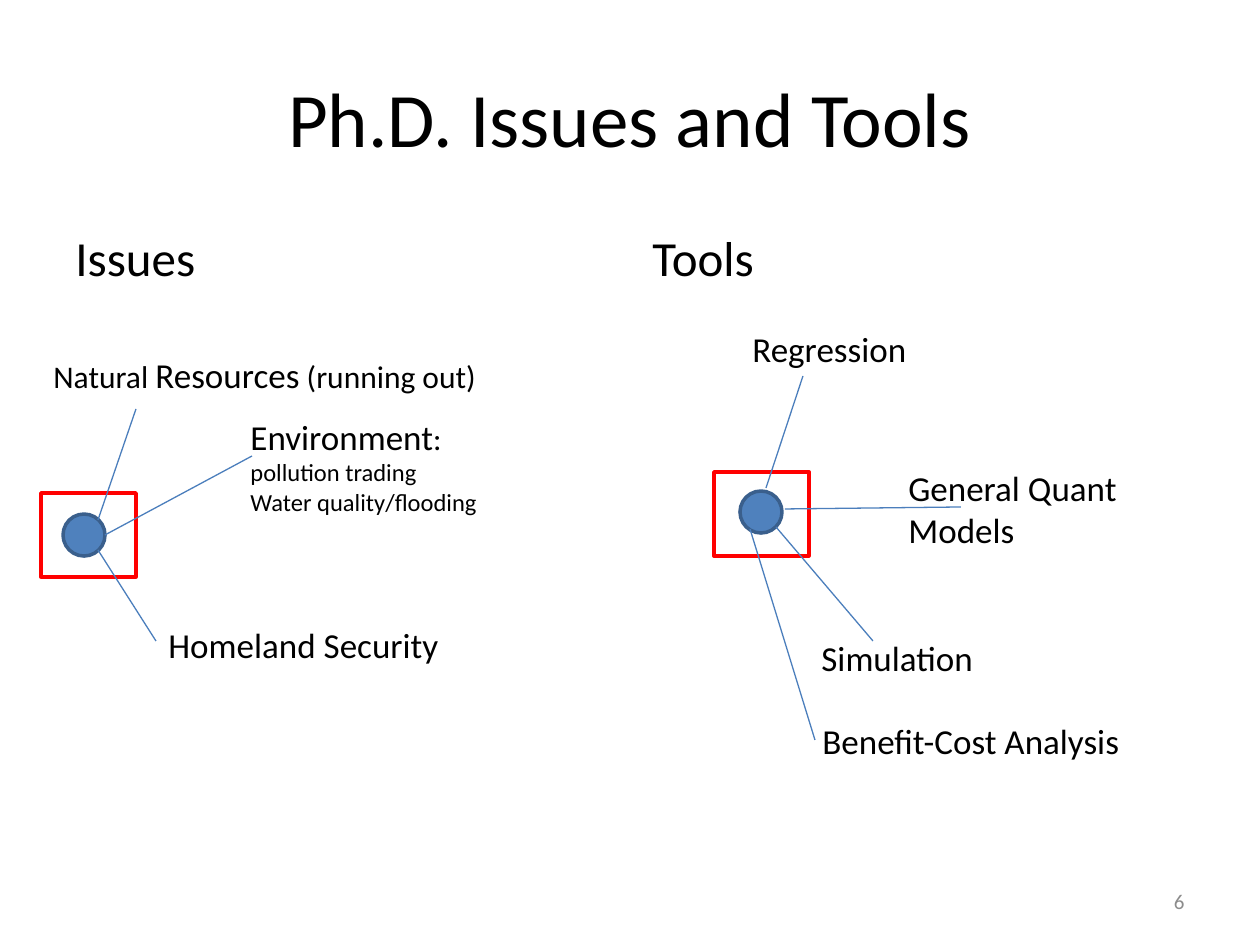
"""Build the slide that links Ph.D. issues to research tools."""
from dataclasses import dataclass

from lxml import etree
from pptx import Presentation
from pptx.dml.color import RGBColor
from pptx.enum.shapes import MSO_CONNECTOR, MSO_SHAPE
from pptx.enum.text import MSO_ANCHOR, MSO_AUTO_SIZE, PP_ALIGN
from pptx.oxml.ns import qn
from pptx.util import Emu, Pt

LEFT, MID, RIGHT = PP_ALIGN.LEFT, PP_ALIGN.CENTER, PP_ALIGN.RIGHT
TOP, HALF = MSO_ANCHOR.TOP, MSO_ANCHOR.MIDDLE
GROW, FIXED = MSO_AUTO_SIZE.SHAPE_TO_FIT_TEXT, MSO_AUTO_SIZE.NONE
RECT, OVAL, LINE = MSO_SHAPE.RECTANGLE, MSO_SHAPE.OVAL, MSO_CONNECTOR.STRAIGHT
FONT = "Calibri"
INKS = {"text": "000000", "page": "8C8C8C", "dot": "4F81BD",
        "rim": "3A5F8C", "frame": "FF0000", "ray": "4B7EBC"}
DOT, WIDE, HIGH = 42, 95, 84


@dataclass
class Run:
    text: str
    size: int = 20


@dataclass
class Label:
    box: tuple[int, int, int, int]
    paras: list[list[Run]]
    align: PP_ALIGN = LEFT
    anchor: MSO_ANCHOR = TOP
    fit: MSO_AUTO_SIZE = GROW
    ink: str = "text"


@dataclass
class Hub:
    dot: tuple[int, int]
    frame: tuple[int, int]
    rays: list[tuple[int, int, int, int]]
    labels: list[Label]


HEADS = [
    Label((63, 38, 1134, 157), [[Run("Ph.D. Issues and Tools", 44)]], MID, HALF, FIXED),
    Label((63, 221, 557, 624), [[Run("Issues", 28)]], fit=FIXED),
    Label((640, 221, 557, 624), [[Run("Tools", 28)]], fit=FIXED),
    Label((903, 876, 294, 50), [[Run("6", 12)]], RIGHT, HALF, FIXED, "page"),
]
HUBS = [
    Hub((63, 514), (41, 493),
        [(98, 520, 136, 409), (105, 535, 252, 456), (98, 550, 156, 641)],
        [Label((41, 347, 484, 55),
               [[Run("Natural ", 18), Run("Resources"), Run(" (running out)", 18)]]),
         Label((238, 409, 421, 115),
               [[Run("Environment"), Run(":", 18)],
                [Run("pollution trading", 14)],
                [Run("Water quality/flooding", 14)]]),
         Label((156, 617, 348, 55), [[Run("Homeland Security")]])]),
    Hub((740, 491), (714, 472),
        [(766, 488, 803, 376), (776, 527, 873, 641),
         (785, 509, 961, 507), (750, 529, 815, 740)],
        [Label((740, 321, 421, 55), [[Run("Regression")]]),
         Label((896, 460, 317, 97), [[Run("General Quant Models")]]),
         Label((809, 630, 285, 55), [[Run("Simulation")]]),
         Label((810, 713, 349, 55), [[Run("Benefit-Cost Analysis")]])]),
]


def px(num: int) -> Emu:
    """Turn pixels into EMU."""
    return Emu(round(num * 914400 / 126))


def tint(name: str) -> RGBColor:
    """Look up a colour."""
    return RGBColor.from_string(INKS[name])


def write(page, label: Label) -> None:
    """Add a text box run by run."""
    frame = page.shapes.add_textbox(*map(px, label.box)).text_frame
    frame.word_wrap = True
    frame.auto_size = label.fit
    frame.vertical_anchor = label.anchor
    for num, runs in enumerate(label.paras):
        para = frame.add_paragraph() if num else frame.paragraphs[0]
        para.alignment = label.align
        for item in runs:
            run = para.add_run()
            run.text = item.text
            run.font.name = FONT
            run.font.size = Pt(item.size)
            run.font.color.rgb = tint(label.ink)


def shape(page, kind: MSO_SHAPE, box: tuple[int, int, int, int],
          edge: str, fill: str = "") -> None:
    """Add an outlined shape, filled if a fill is named."""
    item = page.shapes.add_shape(kind, *map(px, box))
    item.shadow.inherit = False
    item.line.color.rgb = tint(edge)
    item.line.width = Pt(2)
    if fill:
        item.fill.solid()
        item.fill.fore_color.rgb = tint(fill)
    else:
        item.fill.background()


def link(page, ends: tuple[int, int, int, int]) -> None:
    """Add a thin ray between two points."""
    ray = page.shapes.add_connector(LINE, *map(px, ends))
    ray.line.color.rgb = tint("ray")
    ray.line.width = Pt(0.75)
    etree.SubElement(ray._element.spPr, qn("a:effectLst"))


def draw(page, hub: Hub) -> None:
    """Add a framed dot with its rays and labels."""
    shape(page, OVAL, (*hub.dot, DOT, DOT), "rim", "dot")
    shape(page, RECT, (*hub.frame, WIDE, HIGH), "frame")
    for ends in hub.rays:
        link(page, ends)
    for label in hub.labels:
        write(page, label)


def main() -> None:
    """Build and save the deck."""
    deck = Presentation()
    deck.slide_width, deck.slide_height = px(1260), px(945)
    page = deck.slides.add_slide(deck.slide_layouts[6])
    for label in HEADS:
        write(page, label)
    for hub in HUBS:
        draw(page, hub)
    deck.save("out.pptx")


if __name__ == "__main__":
    main()
